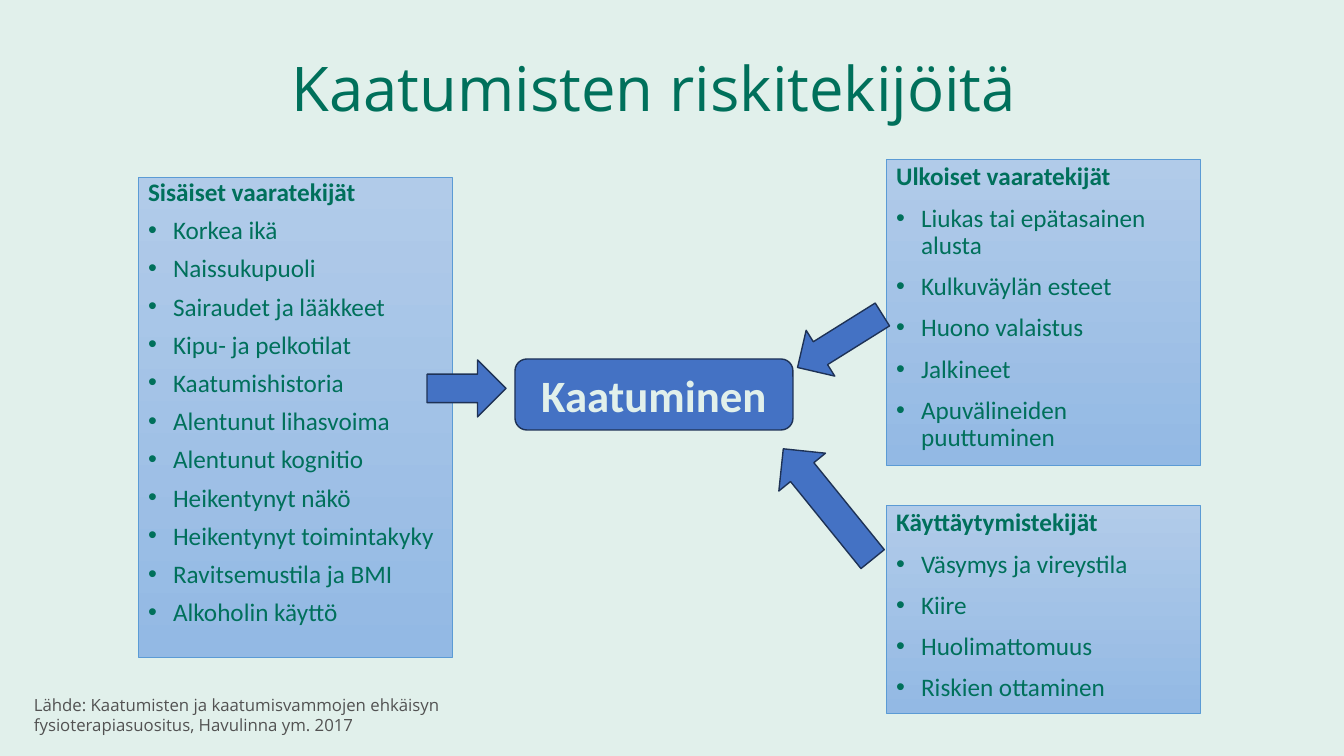
import pptx
import pptx.util
import pptx.dml.color
import pptx.enum.shapes
import pptx.enum.text
import lxml.etree

HEADLINE = "Kaatumisten riskitekijöitä"
HEADLINE_FRAME = (75, 43, 1159, 97)
FACTOR_GROUPS = [
    {
        "placeholder": 1,
        "heading": "Sisäiset vaaratekijät",
        "factors": [
            "Korkea ikä", "Naissukupuoli", "Sairaudet ja lääkkeet",
            "Kipu- ja pelkotilat", "Kaatumishistoria", "Alentunut lihasvoima",
            "Alentunut kognitio", "Heikentynyt näkö", "Heikentynyt toimintakyky",
            "Ravitsemustila ja BMI", "Alkoholin käyttö",
        ],
        "frame": (138, 177, 314, 480),
        "spacing": 0.8,
    },
    {
        "placeholder": 2,
        "heading": "Ulkoiset vaaratekijät",
        "factors": [
            "Liukas tai epätasainen alusta", "Kulkuväylän esteet",
            "Huono valaistus", "Jalkineet", "Apuvälineiden puuttuminen",
        ],
        "frame": (886, 159, 314, 306),
        "spacing": 0.9,
    },
    {
        "placeholder": 4,
        "heading": "Käyttäytymistekijät",
        "factors": ["Väsymys ja vireystila", "Kiire", "Huolimattomuus", "Riskien ottaminen"],
        "frame": (886, 505, 314, 208),
        "spacing": 0.9,
    },
]
UNUSED_PLACEHOLDER = 3
OUTCOME = "Kaatuminen"
OUTCOME_FRAME = (515, 359, 278, 71)
ARROWS = [
    ("RIGHT_ARROW", (427, 360, 79, 57), 0),
    ("LEFT_ARROW", (790, 314, 100, 54), 328),
    ("LEFT_ARROW", (757, 474, 142, 60), 51),
]
SOURCE = "Lähde: Kaatumisten ja kaatumisvammojen ehkäisyn fysioterapiasuositus, Havulinna ym. 2017"
SOURCE_FRAME = (24, 690, 481, 50)

COLORS = {
    "background": "E1F0EB",
    "green": "00705B",
    "panel_top": "B1CBE9",
    "panel_bottom": "93B9E4",
    "panel_edge": "5B9BD5",
    "blue": "4472C4",
    "blue_edge": "1E3256",
    "gray": "525252",
}
EMU_PER_PX = 914400 / 100.8
BULLET_INDENT = 25
SHAPES = pptx.enum.shapes.MSO_SHAPE
ALIGN = pptx.enum.text.PP_ALIGN
ANCHOR = pptx.enum.text.MSO_ANCHOR
NO_AUTOFIT = pptx.enum.text.MSO_AUTO_SIZE.NONE


def px(length):
    return pptx.util.Emu(round(length * EMU_PER_PX))


def color(name):
    return pptx.dml.color.RGBColor.from_string(COLORS[name])


def place(part, frame):
    part.left, part.top, part.width, part.height = map(px, frame)


def style(paragraph, font_name, size, color_name, bold=False):
    for run in paragraph.runs:
        run.font.name = font_name
        run.font.size = pptx.util.Pt(size)
        run.font.bold = bold
        run.font.color.rgb = color(color_name)


def set_bullet(paragraph, bulleted):
    properties = paragraph._p.get_or_add_pPr()
    indent = px(BULLET_INDENT) if bulleted else 0
    properties.set("marL", str(indent))
    properties.set("indent", str(-indent))
    namespace = properties.nsmap["a"]
    if bulleted:
        lxml.etree.SubElement(properties, f"{{{namespace}}}buFont", typeface="Arial")
        lxml.etree.SubElement(properties, f"{{{namespace}}}buChar", char="•")
    else:
        lxml.etree.SubElement(properties, f"{{{namespace}}}buNone")


def fill_group(panel, group):
    place(panel, group["frame"])
    panel.fill.gradient()
    panel.fill.gradient_angle = 270
    for stop, name in zip(panel.fill.gradient_stops, ("panel_top", "panel_bottom")):
        stop.color.rgb = color(name)
    panel.line.color.rgb = color("panel_edge")
    panel.line.width = pptx.util.Pt(0.5)
    frame = panel.text_frame
    frame.text = "\n".join([group["heading"]] + group["factors"])
    frame.auto_size = NO_AUTOFIT
    frame.vertical_anchor = ANCHOR.TOP
    for index, paragraph in enumerate(frame.paragraphs):
        set_bullet(paragraph, index > 0)
        paragraph.line_spacing = group["spacing"]
        paragraph.space_before = pptx.util.Pt(10 if index else 0)
        style(paragraph, "Calibri", 18, "green", bold=index == 0)


def add_blue_shape(slide, kind, frame, rotation=0):
    shape = slide.shapes.add_shape(kind, *map(px, frame))
    shape.rotation = rotation
    shape.shadow.inherit = False
    shape.fill.solid()
    shape.fill.fore_color.rgb = color("blue")
    shape.line.color.rgb = color("blue_edge")
    shape.line.width = pptx.util.Pt(1)
    return shape


def main():
    deck = pptx.Presentation()
    deck.slide_width, deck.slide_height = px(1344), px(756)
    slide = deck.slides.add_slide(deck.slide_layouts.get_by_name("Comparison"))
    slide.background.fill.solid()
    slide.background.fill.fore_color.rgb = color("background")

    headline = slide.shapes.title
    place(headline, HEADLINE_FRAME)
    headline.text_frame.text = HEADLINE
    headline.text_frame.auto_size = NO_AUTOFIT
    headline.text_frame.vertical_anchor = ANCHOR.MIDDLE
    headline_line = headline.text_frame.paragraphs[0]
    headline_line.alignment = ALIGN.CENTER
    headline_line.line_spacing = 0.9
    style(headline_line, "Open Sans", 44, "green")

    panels = {panel.placeholder_format.idx: panel for panel in slide.placeholders}
    for group in FACTOR_GROUPS:
        fill_group(panels[group["placeholder"]], group)
    unused = panels[UNUSED_PLACEHOLDER].element
    unused.getparent().remove(unused)

    outcome = add_blue_shape(slide, SHAPES.ROUNDED_RECTANGLE, OUTCOME_FRAME)
    outcome.text_frame.text = OUTCOME
    outcome.text_frame.vertical_anchor = ANCHOR.MIDDLE
    outcome.text_frame.paragraphs[0].alignment = ALIGN.CENTER
    style(outcome.text_frame.paragraphs[0], "Calibri", 32, "background", bold=True)

    for kind, frame, rotation in ARROWS:
        add_blue_shape(slide, SHAPES[kind], frame, rotation)

    source = slide.shapes.add_textbox(*map(px, SOURCE_FRAME))
    source.text_frame.word_wrap = True
    source.text_frame.text = SOURCE
    style(source.text_frame.paragraphs[0], "Open Sans", 12, "gray")

    deck.save("out.pptx")


if __name__ == "__main__":
    main()
